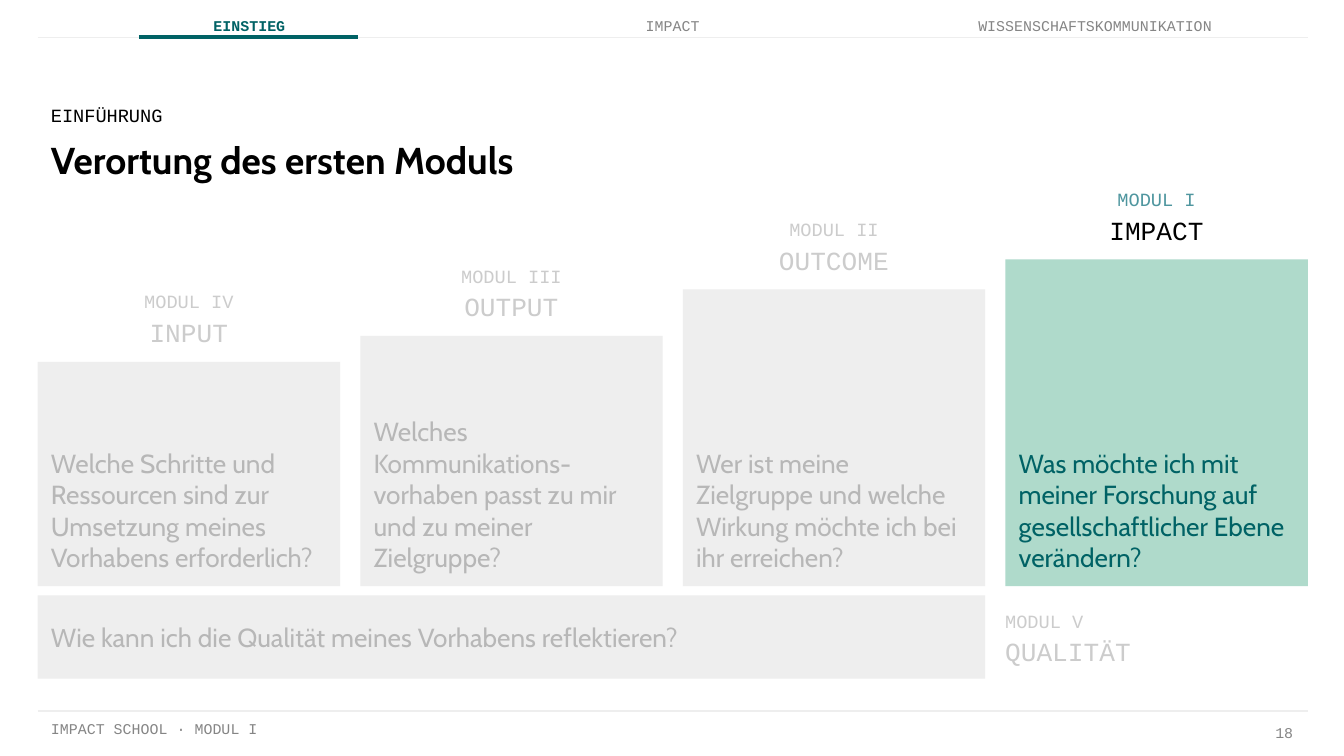
from lxml import etree
from pptx import Presentation
from pptx.dml.color import RGBColor
from pptx.enum.shapes import MSO_CONNECTOR, MSO_SHAPE
from pptx.enum.text import MSO_ANCHOR, PP_ALIGN
from pptx.oxml.ns import qn
from pptx.util import Pt

RECTANGLE = MSO_SHAPE.RECTANGLE
STRAIGHT = MSO_CONNECTOR.STRAIGHT
TOP, MIDDLE, BOTTOM = MSO_ANCHOR.TOP, MSO_ANCHOR.MIDDLE, MSO_ANCHOR.BOTTOM
LEFT, CENTER, RIGHT = PP_ALIGN.LEFT, PP_ALIGN.CENTER, PP_ALIGN.RIGHT

BLACK = RGBColor(0x00, 0x00, 0x00)
WHITE = RGBColor(0xFF, 0xFF, 0xFF)
PETROL = RGBColor(0x00, 0x62, 0x65)
TEAL = RGBColor(0x4F, 0x96, 0x9F)
MINT = RGBColor(0xAF, 0xDA, 0xCB)
PALE = RGBColor(0xEE, 0xEE, 0xEE)
LIGHT = RGBColor(0xCC, 0xCC, 0xCC)
MUTED = RGBColor(0xB7, 0xB7, 0xB7)
GREY = RGBColor(0x85, 0x85, 0x85)

SANS = "Cabin"
MONO = "Courier New"
MARGIN, RIGHT_EDGE = 20.2, 700.6
COLUMN_WIDTH, COLUMN_STEP, COLUMN_BOTTOM = 162, 172.8, 314
LABEL_WIDTH, LABEL_HEIGHT = 127, 20.2
LABEL_RISE, NAME_DROP = 42.5, 16.6

NAVIGATION = [
    ("EINSTIEG", 70.6, 126, True),
    ("IMPACT", 237.6, 245.5, False),
    ("WISSENSCHAFTSKOMMUNIKATION", 483.8, 206, False),
]
MODULES = [
    ("MODUL IV", "INPUT", 193.9, False,
     "Welche Schritte und Ressourcen sind zur Umsetzung meines Vorhabens erforderlich?"),
    ("MODUL III", "OUTPUT", 180, False,
     "Welches Kommunikations-\vvorhaben passt zu mir und zu meiner Zielgruppe?"),
    ("MODUL II", "OUTCOME", 155, False,
     "Wer ist meine Zielgruppe und welche Wirkung möchte ich bei ihr erreichen?"),
    ("MODUL I", "IMPACT", 138.9, True,
     "Was möchte ich mit meiner Forschung auf gesellschaftlicher Ebene verändern?"),
]


def write_text(shape, text, *, size, color, font=MONO, bold=False,
               align=LEFT, anchor=MIDDLE, line_spacing=None):
    frame = shape.text_frame
    frame.word_wrap = True
    frame.vertical_anchor = anchor
    frame.margin_left = frame.margin_right = Pt(7.2)
    frame.margin_top = frame.margin_bottom = Pt(7.2)
    frame.text = text
    paragraph = frame.paragraphs[0]
    paragraph.alignment = align
    paragraph.line_spacing = line_spacing
    for item in (paragraph, *paragraph.runs):
        item.font.name = font
        item.font.size = Pt(size)
        item.font.bold = bold
        item.font.color.rgb = color


class SlideBuilder:
    def __init__(self, slide):
        self.slide = slide

    def label(self, text, left, top, width, height, **style):
        shape = self.slide.shapes.add_textbox(Pt(left), Pt(top), Pt(width), Pt(height))
        write_text(shape, text, **style)

    def panel(self, text, left, top, width, height, fill, **style):
        shape = self.slide.shapes.add_shape(
            RECTANGLE, Pt(left), Pt(top), Pt(width), Pt(height))
        shape.shadow.inherit = False
        shape.fill.solid()
        shape.fill.fore_color.rgb = fill
        shape.line.fill.background()
        write_text(shape, text, **style)

    def rule(self, left, right, top, color, weight):
        connector = self.slide.shapes.add_connector(
            STRAIGHT, Pt(left), Pt(top), Pt(right), Pt(top))
        connector.line.color.rgb = color
        connector.line.width = Pt(weight)
        etree.SubElement(connector._element.spPr, qn("a:effectLst"))


def add_frame(builder):
    builder.label("IMPACT SCHOOL · MODUL I", MARGIN, 380.9, 453.6, 24.5,
                  size=8, color=GREY, anchor=TOP)
    builder.label("18", 668.9, 380.9, 31, 24.5,
                  size=8, color=GREY, align=RIGHT, line_spacing=0.8)
    for top in (380.9, 20.2):
        builder.rule(MARGIN, RIGHT_EDGE, top, PALE, 0.75)
    for text, left, width, active in NAVIGATION:
        builder.label(text, left, 1.5, width, 24.5, size=8, align=CENTER,
                      color=PETROL if active else GREY, bold=active)
    builder.rule(74.4, 192, 19.7, PETROL, 2.25)


def add_heading(builder):
    builder.label("Verortung des ersten Moduls", MARGIN, 66.2, 559.4, 37.4,
                  size=20, color=BLACK, font=SANS, bold=True, anchor=TOP)
    builder.label("EINFÜHRUNG", MARGIN, 54.7, 559.4, 14.4, size=10, color=BLACK)


def add_modules(builder):
    for index, (module, name, top, active, question) in enumerate(MODULES):
        left = MARGIN + index * COLUMN_STEP
        builder.panel(question, left, top, COLUMN_WIDTH, COLUMN_BOTTOM - top,
                      MINT if active else PALE, size=14, font=SANS,
                      color=PETROL if active else MUTED, anchor=BOTTOM)
        label_left = left + (COLUMN_WIDTH - LABEL_WIDTH) / 2
        label_top = top - LABEL_RISE
        builder.label(name, label_left, label_top + NAME_DROP, LABEL_WIDTH, LABEL_HEIGHT,
                      size=14, color=BLACK if active else LIGHT, align=CENTER)
        builder.label(module, label_left, label_top, LABEL_WIDTH, LABEL_HEIGHT,
                      size=10, color=TEAL if active else LIGHT, align=CENTER)


def add_quality(builder):
    builder.panel("QUALITÄT", 531.4, 333.4, 87.8, 26.6, WHITE,
                  size=14, color=LIGHT, anchor=TOP)
    builder.panel("Wie kann ich die Qualität meines Vorhabens reflektieren?",
                  MARGIN, 319, 507.6, 44.6, PALE, size=14, color=MUTED, font=SANS)
    builder.label("MODUL V", 531.4, 322.6, 72, LABEL_HEIGHT, size=10, color=LIGHT)


def main():
    presentation = Presentation()
    presentation.slide_width = Pt(720)
    presentation.slide_height = Pt(405)
    builder = SlideBuilder(presentation.slides.add_slide(presentation.slide_layouts[6]))
    add_frame(builder)
    add_heading(builder)
    add_modules(builder)
    add_quality(builder)
    presentation.save("out.pptx")


if __name__ == "__main__":
    main()
